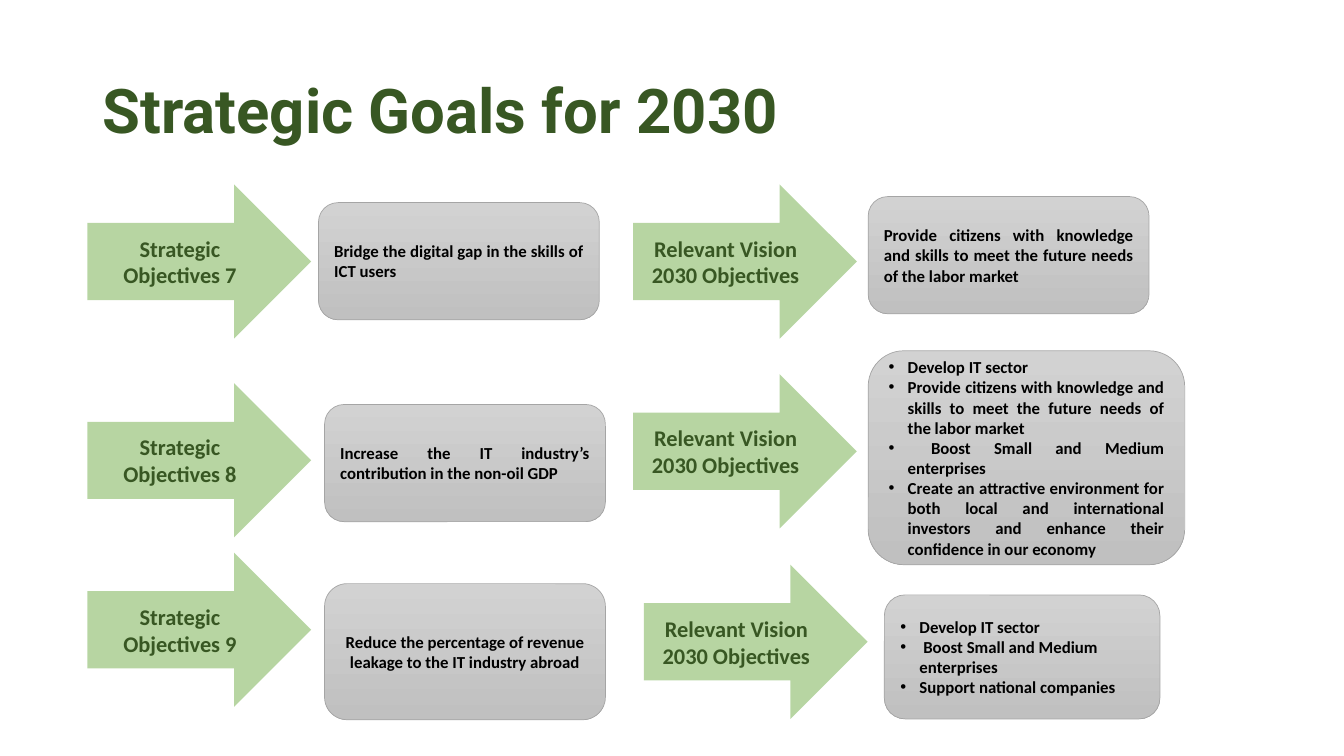
from lxml import etree
from pptx import Presentation
from pptx.dml.color import RGBColor
from pptx.enum.shapes import MSO_SHAPE
from pptx.enum.text import MSO_ANCHOR, PP_ALIGN
from pptx.oxml.ns import qn
from pptx.util import Inches, Pt

ARROW, ROUND = MSO_SHAPE.RIGHT_ARROW, MSO_SHAPE.ROUNDED_RECTANGLE
MIDDLE = MSO_ANCHOR.MIDDLE
LEFT, CENTER, JUSTIFY = PP_ALIGN.LEFT, PP_ALIGN.CENTER, PP_ALIGN.JUSTIFY

WIDTH, HEIGHT = Inches(13.33), Inches(7.5)
GREEN, DARK, BLACK = "70AD47", "385723", "000000"
SILVER, GRAY, EDGE = "D2D2D2", "C0C0C0", "A5A5A5"

# Places are percent shares of the slide's width and height
ARROW_W, ARROW_H = 16.65, 20.4
BOX_W, BOX_H = 20.9, 15.5
AIM = "Relevant Vision 2030 Objectives"
SKILLS = ("Provide citizens with knowledge and skills to meet "
          "the future needs of the labor market")
SECTOR = "Develop IT sector"
BOOST = " Boost Small and Medium enterprises"

ARROWS = [  # left, top, label
    (6.5, 24.4, "Strategic Objectives 7"),
    (6.5, 50.7, "Strategic Objectives 8"),
    (6.5, 73.1, "Strategic Objectives 9"),
    (47.1, 24.4, AIM),
    (47.1, 49.5, AIM),
    (47.9, 74.7, AIM),
]
GOALS = [  # left, top, width, height, align, text
    (23.7, 26.8, BOX_W, BOX_H, JUSTIFY,
     "Bridge the digital gap in the skills of ICT users"),
    (24.15, 53.5, BOX_W, BOX_H, JUSTIFY,
     "Increase the IT industry’s contribution in the non-oil GDP"),
    (24.15, 77.2, BOX_W, 18, CENTER,
     "Reduce the percentage of revenue leakage to the IT industry abroad"),
    (64.6, 26, BOX_W, BOX_H, JUSTIFY, SKILLS),
]
LISTS = [  # left, top, width, height, align, items
    (64.6, 46.4, 23.55, 28.3, JUSTIFY,
     [SECTOR, SKILLS, BOOST,
      "Create an attractive environment for both local and international "
      "investors and enhance their confidence in our economy"]),
    (65.8, 78.7, 20.5, 16.4, LEFT,
     [SECTOR, BOOST, "Support national companies"]),
]


def color(code):
    return RGBColor.from_string(code)


def place(left, top, width, height):
    return (int(WIDTH * left / 100), int(HEIGHT * top / 100),
            int(WIDTH * width / 100), int(HEIGHT * height / 100))


def add_bullet(para):
    props = para._p.get_or_add_pPr()
    props.set("marL", str(Inches(0.19)))
    props.set("indent", str(-Inches(0.19)))
    etree.SubElement(props, qn("a:buFont")).set("typeface", "Arial")
    etree.SubElement(props, qn("a:buChar")).set("char", "•")


def write(shape, lines, size, tint, align, face="Calibri", bullet=False):
    frame = shape.text_frame
    frame.word_wrap = True
    frame.vertical_anchor = MIDDLE
    frame.text = "\n".join(lines)
    for para in frame.paragraphs:
        para.alignment = align
        if bullet:
            add_bullet(para)
        font = para.font
        font.name, font.size, font.bold = face, Pt(size), True
        font.color.rgb = color(tint)


def add_title(slide, text):
    box = slide.shapes.add_textbox(*place(6.9, 5.3, 86.25, 19.3))
    write(box, [text], 44, DARK, LEFT, "Roboto")
    box.text_frame.paragraphs[0].line_spacing = 0.9


def add_arrow(slide, left, top, label):
    arrow = slide.shapes.add_shape(
        ARROW, *place(left, top, ARROW_W, ARROW_H))
    arrow.shadow.inherit = False
    arrow.fill.solid()
    arrow.fill.fore_color.rgb = color(GREEN)
    # Half transparent fill
    tone = arrow._element.spPr.find(qn("a:solidFill"))[0]
    etree.SubElement(tone, qn("a:alpha")).set("val", "50000")
    arrow.line.fill.background()
    write(arrow, [label], 16, DARK, CENTER)


def add_card(slide, spot, align, lines, bullet=False):
    card = slide.shapes.add_shape(ROUND, *place(*spot))
    card.shadow.inherit = False
    # Vertical fade from light to darker gray
    card.fill.gradient()
    card.fill.gradient_angle = 270
    for stop, tint in zip(card.fill.gradient_stops, (SILVER, GRAY)):
        stop.color.rgb = color(tint)
    card.line.color.rgb = color(EDGE)
    card.line.width = Pt(0.5)
    write(card, lines, 12, BLACK, align, bullet=bullet)


def main():
    deck = Presentation()
    deck.slide_width, deck.slide_height = WIDTH, HEIGHT
    slide = deck.slides.add_slide(deck.slide_layouts[6])
    add_title(slide, "Strategic Goals for 2030")
    for arrow in ARROWS:
        add_arrow(slide, *arrow)
    for *spot, align, text in GOALS:
        add_card(slide, spot, align, [text])
    for *spot, align, items in LISTS:
        add_card(slide, spot, align, items, bullet=True)
    deck.save("out.pptx")


if __name__ == "__main__":
    main()
